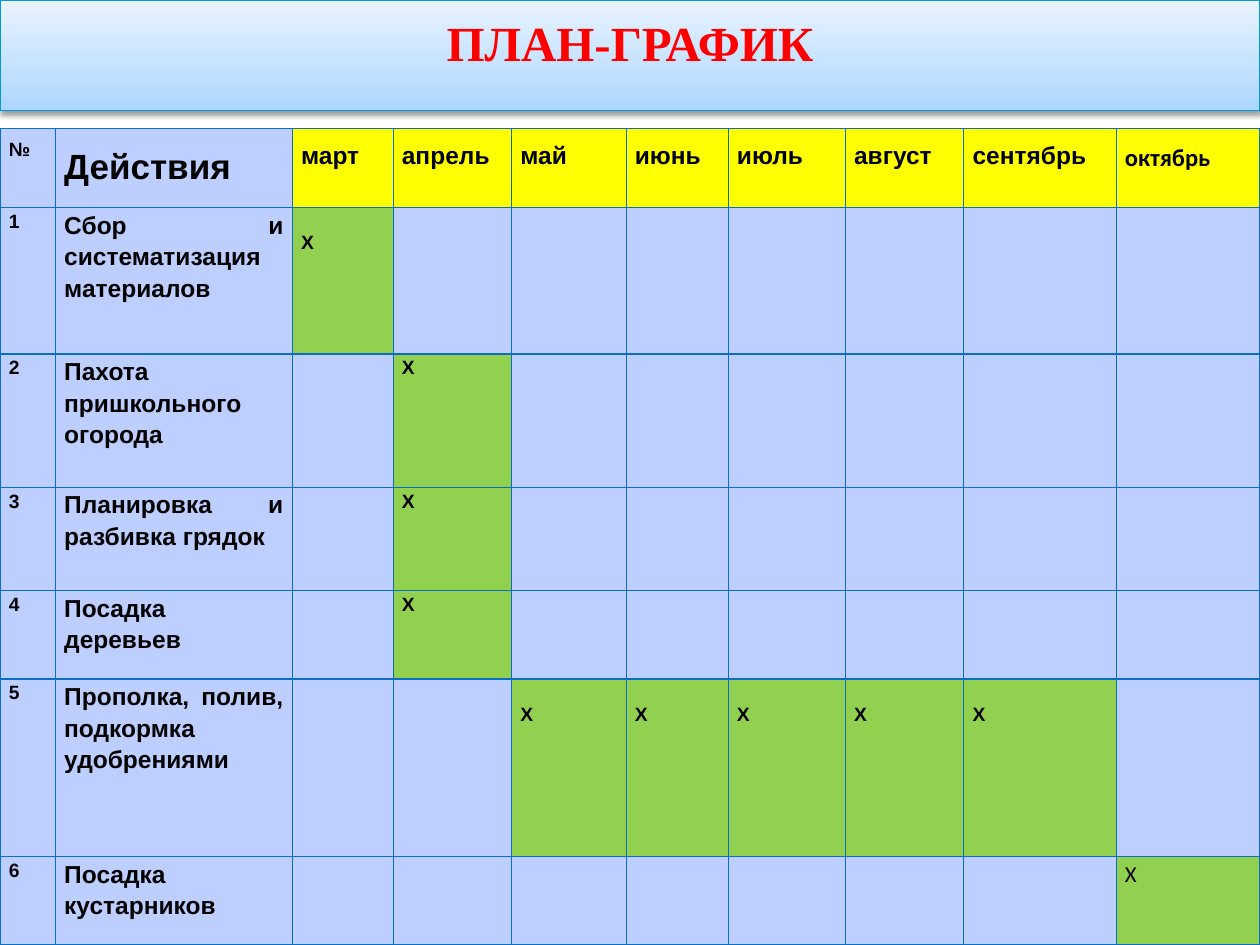
import pptx
import pptx.util
import pptx.oxml
import pptx.dml.color
import pptx.enum.text

Inches, Pt = pptx.util.Inches, pptx.util.Pt
ALIGN = pptx.enum.text.PP_ALIGN
ANCHOR = pptx.enum.text.MSO_ANCHOR
NS = 'xmlns:a="http://schemas.openxmlformats.org/drawingml/2006/main"'

# Content
TITLE = "ПЛАН-ГРАФИК"
MONTHS = ["март", "апрель", "май", "июнь", "июль", "август", "сентябрь", "октябрь"]
TASKS = [  # action, months marked
    ("Сбор и систематизация материалов", ["март"]),
    ("Пахота пришкольного огорода", ["апрель"]),
    ("Планировка и разбивка грядок", ["апрель"]),
    ("Посадка деревьев", ["апрель"]),
    ("Прополка, полив, подкормка удобрениями",
     ["май", "июнь", "июль", "август", "сентябрь"]),
    ("Посадка кустарников", ["октябрь"]),
]
LOW = {1, 5}  # rows whose marks sit one line lower
COLS = [0.44, 1.88, 0.8, 0.94, 0.91, 0.81, 0.93, 0.94, 1.21, 1.14]
ROWS = [0.63, 1.16, 1.06, 0.82, 0.7, 1.41, 0.7]
COLORS = {"base": "BCCFFF", "month": "FFFF00", "mark": "92D050", "grid": "0A6DC6",
          "text": "000000", "title": "FF0000", "edge": "009AD4"}
STOPS = [(0, "ABD6FF"), (35, "C3E1FF"), (100, "E8F3FF")]


def color(name):
    return pptx.dml.color.RGBColor.from_string(COLORS[name])


def write(para, text, size, font="Arial", bold=True, ink="text"):
    run = para.add_run()
    run.text = text
    run.font.size, run.font.name, run.font.bold = Pt(size), font, bold
    run.font.color.rgb = color(ink)


def style(cell, fill):
    cell.fill.solid()
    cell.fill.fore_color.rgb = color(fill)
    cell.margin_left = cell.margin_right = Inches(0.07)
    cell.margin_top = cell.margin_bottom = 0
    props = cell._tc.get_or_add_tcPr()
    for i, side in enumerate("LRTB"):
        props.insert(i, pptx.oxml.parse_xml(
            f'<a:ln{side} {NS} w="9525"><a:solidFill><a:srgbClr val="{COLORS["grid"]}"/>'
            f'</a:solidFill></a:ln{side}>'))


def put(cell, text, size, space=1.15, **look):
    para = cell.text_frame.paragraphs[0]
    para.alignment, para.line_spacing = ALIGN.JUSTIFY, space
    write(para, text, size, **look)


prs = pptx.Presentation()
prs.slide_width, prs.slide_height = Inches(10), Inches(7.5)
slide = prs.slides.add_slide(prs.slide_layouts[5])

# Plan table
table = slide.shapes.add_table(len(ROWS), len(COLS), 0, Inches(1.02),
                               Inches(10), Inches(6.48)).table
table.first_row = table.horz_banding = False
for col, width in zip(table.columns, COLS):
    col.width = Inches(width)
for row, height in zip(table.rows, ROWS):
    row.height = Inches(height)

# Header row
put(table.cell(0, 0), "№", 11, 1.5)
put(table.cell(0, 1), "Действия", 20, 1.5)
for c, month in enumerate(MONTHS, 2):
    font = "Calibri" if month == "октябрь" else "Arial"
    put(table.cell(0, c), month, 14, 1.5, font=font)
for c in range(len(COLS)):
    style(table.cell(0, c), "month" if c > 1 else "base")

# Task rows
for r, (task, marked) in enumerate(TASKS, 1):
    put(table.cell(r, 0), str(r), 11)
    put(table.cell(r, 1), task, 14)
    for c in range(len(COLS)):
        cell = table.cell(r, c)
        on = c > 1 and MONTHS[c - 2] in marked
        style(cell, "mark" if on else "base")
        if on:
            last = r == len(TASKS)
            put(cell, "Х", 13 if last else 11,
                font="Calibri" if last else "Arial", bold=not last)
            if r in LOW:
                cell.margin_top = Inches(0.17)

# Title band, in front of the table
title = slide.shapes.title
slide.shapes._spTree.append(title._element)
title.left, title.top, title.width, title.height = 0, 0, Inches(10), Inches(0.88)
frame = title.text_frame
frame.auto_size = pptx.enum.text.MSO_AUTO_SIZE.NONE
frame.vertical_anchor = ANCHOR.TOP
frame.margin_top = Inches(0.1)
frame.paragraphs[0].alignment = ALIGN.CENTER
write(frame.paragraphs[0], TITLE, 28, "Times New Roman", ink="title")

# Band gradient, edge and shadow
stops = "".join(f'<a:gs pos="{pos * 1000}"><a:srgbClr val="{tone}"/></a:gs>'
                for pos, tone in STOPS)
props = title._element.spPr
props.append(pptx.oxml.parse_xml(
    f'<a:gradFill {NS} rotWithShape="1"><a:gsLst>{stops}</a:gsLst>'
    '<a:lin ang="16200000" scaled="0"/></a:gradFill>'))
title.line.color.rgb = color("edge")
title.line.width = Pt(0.75)
props.append(pptx.oxml.parse_xml(
    f'<a:effectLst {NS}><a:outerShdw blurRad="{Pt(3.1)}" dist="{Pt(1.6)}" dir="5400000" '
    'rotWithShape="0"><a:srgbClr val="000000"><a:alpha val="38000"/></a:srgbClr>'
    '</a:outerShdw></a:effectLst>'))

prs.save("out.pptx")
